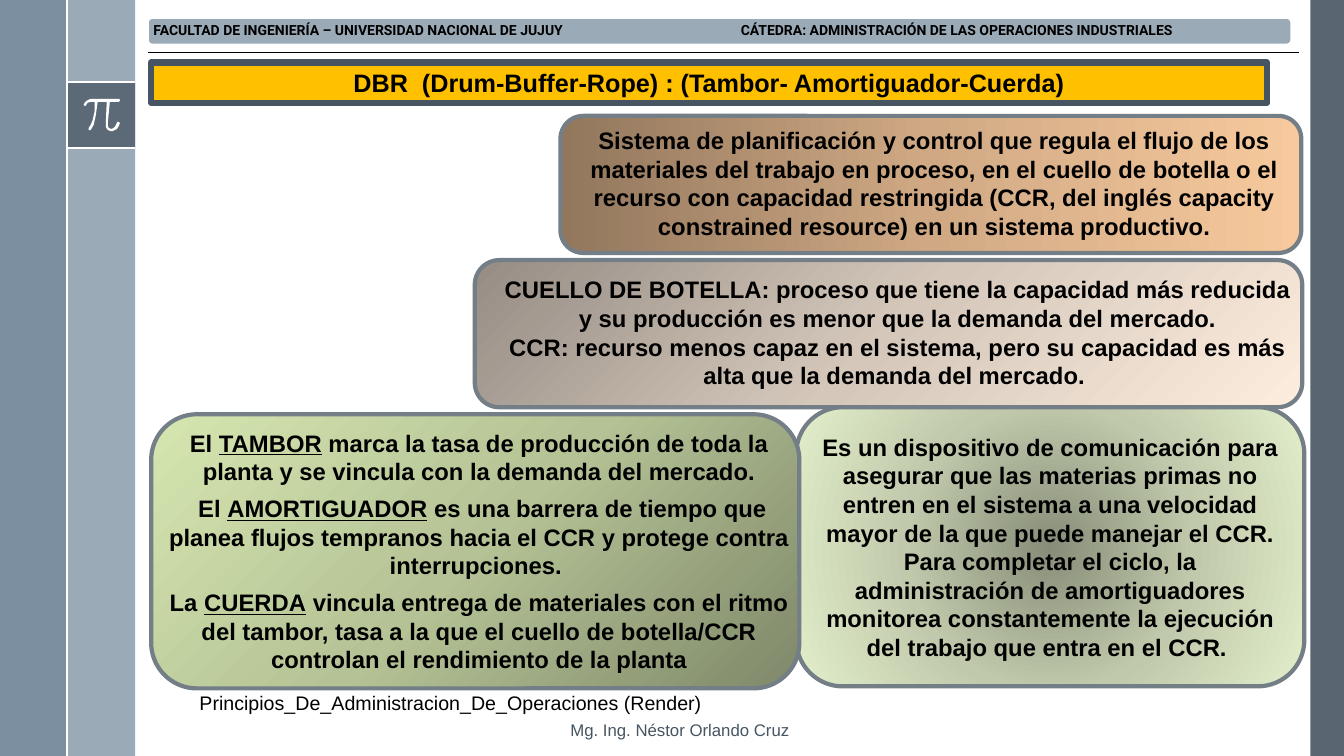
from lxml.etree import SubElement
from pptx import Presentation
from pptx.dml.color import RGBColor
from pptx.enum.shapes import MSO_CONNECTOR, MSO_SHAPE
from pptx.enum.text import MSO_ANCHOR, PP_ALIGN
from pptx.oxml import parse_xml
from pptx.oxml.ns import nsdecls, qn
from pptx.util import Pt

SLATE, STEEL, WHITE, BLACK, BORDER = "475562", "9BAAB7", "FFFFFF", "000000", "737E87"
PI_OUTLINE = [
    (118, 98), (90, 98), (86.5, 99.5), (84, 102), (83, 104), (84, 105), (85, 105),
    (87, 102.3), (90, 101), (94, 101), (93.5, 110), (92, 119), (90, 124.5), (88, 127),
    (87.5, 128), (88, 129), (89, 129.3), (90, 129), (93, 123.5), (95, 115), (97, 101),
    (106, 101), (105, 122), (105.2, 126), (107, 129), (110, 130), (112, 130),
    (115.5, 128.3), (118, 125), (119, 122), (118, 121), (116.5, 121), (116, 122),
    (114, 126), (111, 128), (108, 127), (107, 125), (107, 122), (109, 101), (118, 101),
    (119, 100), (119, 99)]


def rgb(color):
    """Turn a hex string into a colour."""
    return RGBColor.from_string(color)


def set_line(sp, color, width):
    """Give a shape an outline, or none when color is None."""
    if color:
        sp.line.color.rgb = rgb(color)
        sp.line.width = Pt(width)
    else:
        sp.line.fill.background()


def add_box(s, kind, box, fill, line=None, width=1, alpha=None):
    """Add a preset shape with a plain, optionally see-through fill."""
    sp = s.shapes.add_shape(kind, *map(Pt, box))
    sp.shadow.inherit = False
    sp.fill.solid()
    sp.fill.fore_color.rgb = rgb(fill)
    if alpha:
        clr = sp.fill._xPr.find(qn("a:solidFill"))[0]
        SubElement(clr, qn("a:alpha")).set("val", str(alpha * 1000))
    set_line(sp, line, width)
    return sp


def add_panel(s, box, colors, angle=None):
    """Add a rounded panel with a linear gradient, or a radial one without angle."""
    sp = add_box(s, MSO_SHAPE.ROUNDED_RECTANGLE, box, colors[0], BORDER, 3)
    stops = "".join(f'<a:gs pos="{i * 50000}"><a:srgbClr val="{c}"/></a:gs>'
                    for i, c in enumerate(colors))
    if angle is None:
        course = ('<a:path path="circle"><a:fillToRect l="50000" t="50000" '
                  'r="50000" b="50000"/></a:path>')
    else:
        course = f'<a:lin ang="{angle * 60000}" scaled="0"/>'
    solid = sp._element.spPr.find(qn("a:solidFill"))
    solid.getparent().replace(solid, parse_xml(
        f'<a:gradFill {nsdecls("a")} rotWithShape="1">'
        f'<a:gsLst>{stops}</a:gsLst>{course}</a:gradFill>'))
    return sp


def add_rule(s, x1, y1, x2, y2, color, width):
    """Add a straight line."""
    ln = s.shapes.add_connector(MSO_CONNECTOR.STRAIGHT, *map(Pt, (x1, y1, x2, y2)))
    set_line(ln, color, width)
    SubElement(ln._element.spPr, qn("a:effectLst"))


def write(sp, paragraphs, size, color=BLACK, bold=True, align=PP_ALIGN.CENTER,
          anchor=MSO_ANCHOR.TOP, font="Arial", before=0):
    """Write paragraphs into a shape; words between asterisks are underlined."""
    tf = sp.text_frame
    tf.word_wrap = True
    tf.vertical_anchor = anchor
    for i, text in enumerate(paragraphs):
        p = tf.add_paragraph() if i else tf.paragraphs[0]
        p.alignment = align
        p.space_before = Pt(before)
        for j, part in enumerate(text.split("*")):
            r = p.add_run()
            r.text = part
            r.font.name = font
            r.font.size = Pt(size)
            r.font.bold = bold
            r.font.color.rgb = rgb(color)
            if j % 2:
                r.font.underline = True
    return tf


def add_text(s, box, paragraphs, size, **style):
    """Add a wrapped text box."""
    return write(s.shapes.add_textbox(*map(Pt, box)), paragraphs, size, **style)


def add_sidebars(s):
    """Draw the side bands and the pi emblem."""
    rect = MSO_SHAPE.RECTANGLE
    add_box(s, rect, (936, 0, 24, 540), SLATE, alpha=90)
    add_box(s, rect, (48, 0, 48.5, 540), STEEL)
    add_box(s, rect, (0, 0, 48, 540), "6A8093", alpha=88)
    add_box(s, rect, (48, 58.3, 48.5, 47.7), SLATE, alpha=75)
    for y in (58.3, 106):
        add_rule(s, 48, y, 96.5, y, WHITE, 1.5)
    fb = s.shapes.build_freeform(*PI_OUTLINE[0], scale=Pt(0.72))
    fb.add_line_segments(PI_OUTLINE[1:], close=True)
    sp = fb.convert_to_shape()
    sp.shadow.inherit = False
    sp.fill.solid()
    sp.fill.fore_color.rgb = rgb(WHITE)
    set_line(sp, None, 0)
    add_rule(s, 48, 0, 48, 540, WHITE, 1.5)


def add_header(s):
    """Draw the header band, its two captions on a tab stop, and the rule."""
    add_box(s, MSO_SHAPE.ROUNDED_RECTANGLE, (105.8, 13, 816.5, 18.7), STEEL, WHITE)
    tf = add_text(s, (106.6, 13.7, 814.3, 17.3),
                  ["FACULTAD DE INGENIERÍA – UNIVERSIDAD NACIONAL DE JUJUY\t"
                   "CÁTEDRA: ADMINISTRACIÓN DE LAS OPERACIONES INDUSTRIALES"],
                  10, align=PP_ALIGN.LEFT, anchor=MSO_ANCHOR.MIDDLE, font="Roboto")
    tf.margin_left = tf.margin_right = tf.margin_top = tf.margin_bottom = Pt(3)
    p = tf.paragraphs[0]
    p.line_spacing = 0.9
    tabs = SubElement(p._p.get_or_add_pPr(), qn("a:tabLst"))
    tab = SubElement(tabs, qn("a:tab"))
    tab.set("pos", str(Pt(419.5)))
    tab.set("algn", "l")
    add_rule(s, 105.8, 37.4, 928, 37.4, BLACK, 0.5)


def main():
    """Build the slide and save it."""
    prs = Presentation()
    prs.slide_width, prs.slide_height = Pt(960), Pt(540)
    s = prs.slides.add_slide(prs.slide_layouts[6])
    add_sidebars(s)
    add_text(s, (400.3, 510.5, 232.6, 21.6), ["Mg. Ing. Néstor Orlando Cruz"], 12,
             color="465562", bold=False, align=PP_ALIGN.LEFT)
    add_header(s)
    title = add_box(s, MSO_SHAPE.RECTANGLE, (108, 44.6, 797, 28.8), "FFC000", SLATE, 4.5)
    write(title, ["DBR  (Drum-Buffer-Rope) : (Tambor- Amortiguador-Cuerda)"], 18)

    add_panel(s, (400.3, 82.8, 529.2, 97.9), ("92775D", "D0A984", "F7C99D"), 0)
    add_text(s, (410.4, 86.4, 514, 90), [
        "Sistema de planificación y control que regula el flujo de los materiales del "
        "trabajo en proceso, en el cuello de botella o el recurso con capacidad "
        "restringida (CCR, del inglés capacity constrained resource) en un sistema "
        "productivo."], 17)

    add_panel(s, (339.1, 185.8, 591.1, 105.1), ("968C84", "D5C8BB", "FCEDDE"), 45)
    rope = add_panel(s, (568.8, 290.9, 362.9, 199.4), ("878D78", "C0C9AB", "E3EFCB"))
    write(rope, [
        "Es un dispositivo de comunicación para asegurar que las materias primas no "
        "entren en el sistema a una velocidad mayor de la que puede manejar el CCR. "
        "Para completar el ciclo, la administración de amortiguadores monitorea "
        "constantemente la ejecución del trabajo que entra en el CCR. "],
        17, anchor=MSO_ANCHOR.MIDDLE)
    add_panel(s, (108, 295.9, 463, 195.8), ("7F8869", "B4C295", "D6E6B0"), 225)
    add_text(s, (351.4, 193, 579.6, 90), [
        "CUELLO DE BOTELLA: proceso que tiene la capacidad más reducida y su "
        "producción es menor que la demanda del mercado.",
        "CCR: recurso menos capaz en el sistema, pero su capacidad es más alta que "
        "la demanda del mercado. "], 17)
    add_text(s, (112.3, 302.4, 460, 184.3), [
        "El *TAMBOR* marca la tasa de producción de toda la planta y se vincula con "
        "la demanda del mercado.",
        " El *AMORTIGUADOR* es una barrera de tiempo que planea flujos tempranos "
        "hacia el CCR y protege contra interrupciones. ",
        "La *CUERDA* vincula entrega de materiales con el ritmo del tambor, tasa a la "
        "que el cuello de botella/CCR controlan el rendimiento de la planta"],
        17, before=6)
    add_text(s, (135.4, 490.3, 384.5, 24.5),
             ["Principios_De_Administracion_De_Operaciones (Render)"], 14,
             bold=False, align=PP_ALIGN.LEFT)
    prs.save("out.pptx")


if __name__ == "__main__":
    main()
